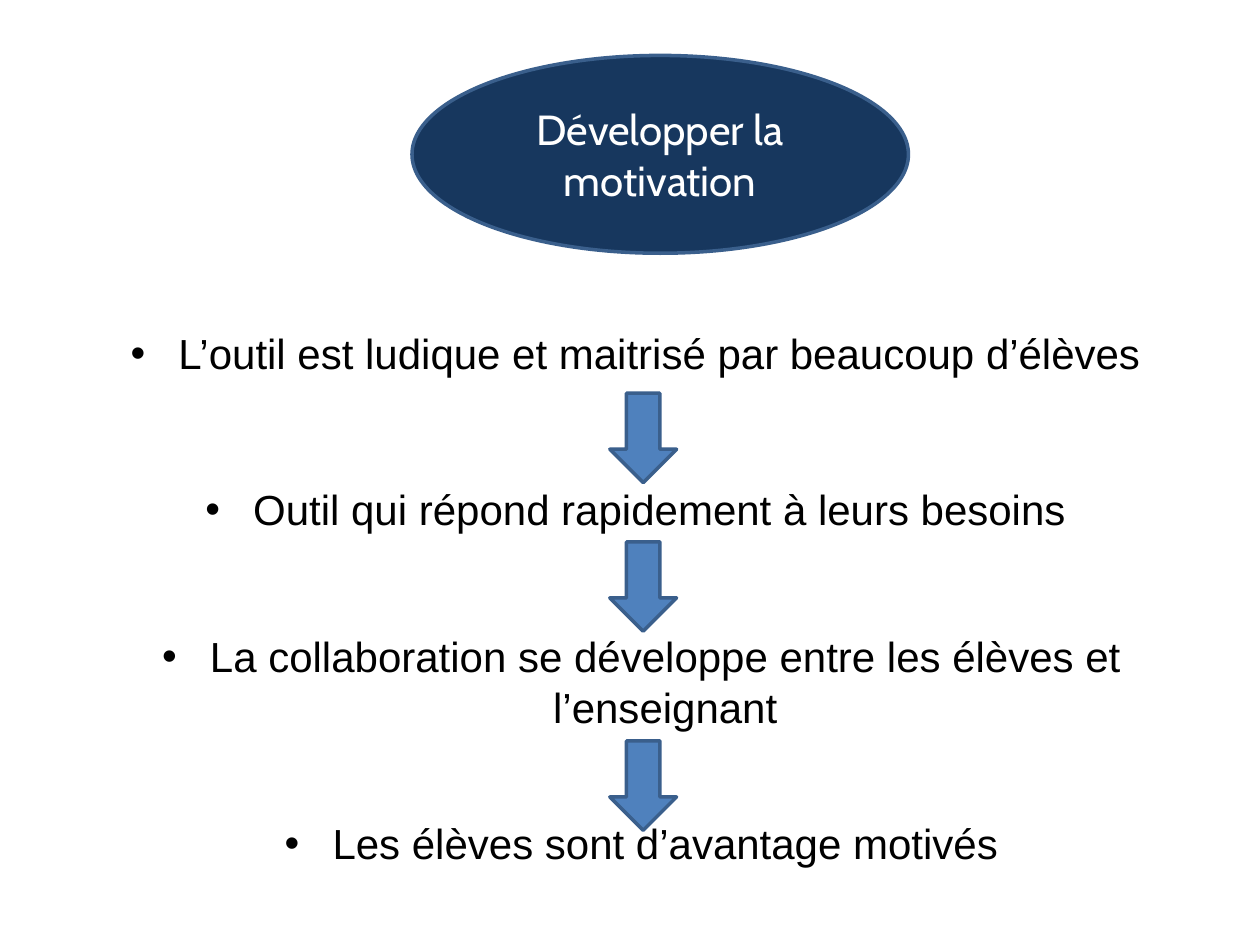
from dataclasses import dataclass

from lxml import etree
from pptx import Presentation
from pptx.dml.color import RGBColor
from pptx.enum.shapes import MSO_SHAPE
from pptx.enum.text import MSO_ANCHOR, PP_ALIGN
from pptx.oxml.ns import qn
from pptx.util import Inches, Pt


@dataclass(frozen=True)
class Theme:
    navy: RGBColor = RGBColor(0x17, 0x37, 0x5E)
    blue: RGBColor = RGBColor(0x4F, 0x81, 0xBD)
    outline: RGBColor = RGBColor(0x3A, 0x5F, 0x8C)
    white: RGBColor = RGBColor(0xFF, 0xFF, 0xFF)
    black: RGBColor = RGBColor(0, 0, 0)
    title_font: str = "Cabin"
    body_font: str = "Arial"
    size: Pt = Pt(24)
    leading: Pt = Pt(29)
    line: Pt = Pt(2)


theme = Theme()


def add_outlined(kind, left, top, width, height, fill):
    sp = s.shapes.add_shape(kind, Inches(left), Inches(top), Inches(width), Inches(height))
    sp.shadow.inherit = False
    sp.fill.solid()
    sp.fill.fore_color.rgb = fill
    sp.line.color.rgb = theme.outline
    sp.line.width = theme.line
    return sp


def add_run(p, text, font, color):
    r = p.add_run()
    r.text = text
    r.font.name = font
    r.font.size = theme.size
    r.font.color.rgb = color


prs = Presentation()
prs.slide_width, prs.slide_height = Inches(10), Inches(7.5)
s = prs.slides.add_slide(prs.slide_layouts[6])

# Steps: text and space before
steps = [
    ("L’outil est ludique et maitrisé par beaucoup d’élèves ", 0),
    ("Outil qui répond rapidement à leurs besoins ", 60),
    ("La collaboration se développe entre les élèves et l’enseignant", 55),
    ("Les élèves sont d’avantage motivés", 49),
]
tf = s.shapes.add_textbox(Inches(0.59), Inches(1.94), Inches(9), Inches(5.12)).text_frame
tf.word_wrap = True
tf.margin_top = Inches(0.66)
for i, (text, gap) in enumerate(steps):
    p = tf.paragraphs[0] if i == 0 else tf.add_paragraph()
    pPr = p._p.get_or_add_pPr()
    pPr.set("marL", str(Inches(0.38)))
    pPr.set("indent", str(-Inches(0.38)))
    etree.SubElement(pPr, qn("a:buFont")).set("typeface", theme.body_font)
    etree.SubElement(pPr, qn("a:buChar")).set("char", "•")
    p.alignment = PP_ALIGN.CENTER
    p.line_spacing = theme.leading
    if gap:
        p.space_before = Pt(gap)
    add_run(p, text, theme.body_font, theme.black)

# Arrows between the steps
for top in (3.12, 4.3, 5.88):
    add_outlined(MSO_SHAPE.DOWN_ARROW, 4.84, top, 0.53, 0.71, theme.blue)

# Title ellipse
sp = add_outlined(MSO_SHAPE.OVAL, 3.27, 0.44, 3.94, 1.57, theme.navy)
tf = sp.text_frame
tf.word_wrap = True
tf.vertical_anchor = MSO_ANCHOR.MIDDLE
p = tf.paragraphs[0]
p.alignment = PP_ALIGN.CENTER
add_run(p, "Développer la motivation", theme.title_font, theme.white)

prs.save("out.pptx")
